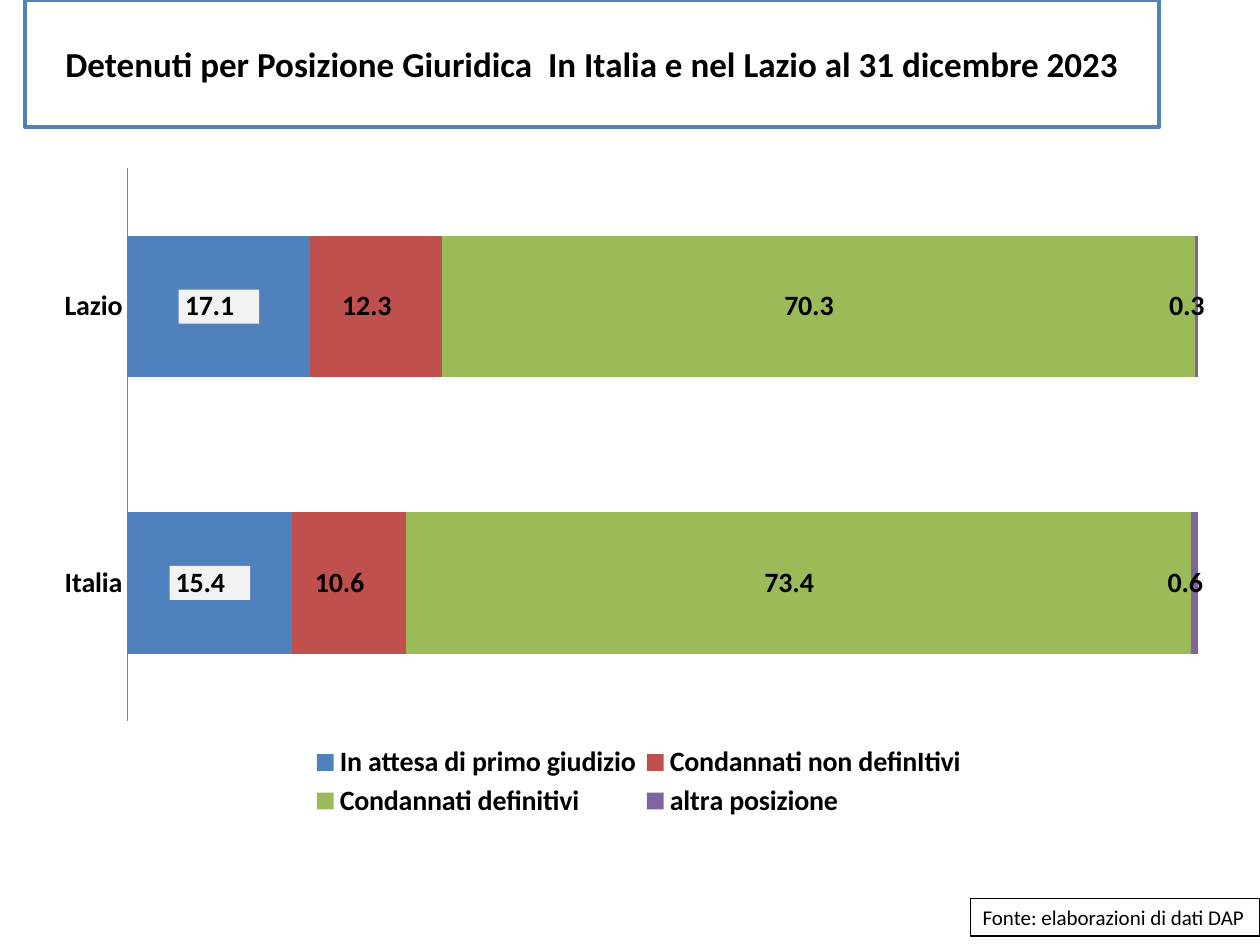
from lxml import etree
from pptx import Presentation
from pptx.chart.data import CategoryChartData
from pptx.dml.color import RGBColor
from pptx.enum.chart import XL_CHART_TYPE, XL_LEGEND_POSITION, XL_TICK_LABEL_POSITION, XL_TICK_MARK
from pptx.enum.text import MSO_ANCHOR, MSO_AUTO_SIZE, PP_ALIGN
from pptx.oxml import parse_xml
from pptx.oxml.ns import nsdecls, qn
from pptx.util import Inches, Pt

BAR = XL_CHART_TYPE.BAR_STACKED_100
BOTTOM = XL_LEGEND_POSITION.BOTTOM
NO_LABELS = XL_TICK_LABEL_POSITION.NONE
NO_TICK = XL_TICK_MARK.NONE
MIDDLE = MSO_ANCHOR.MIDDLE
GROW = MSO_AUTO_SIZE.SHAPE_TO_FIT_TEXT
CENTER = PP_ALIGN.CENTER

NUMBER = '_-* #,##0.0\\ _€_-;\\-* #,##0.0\\ _€_-;_-* "-"??\\ _€_-;_-@_-'
SERIES = [
    ("In attesa di primo giudizio", (17.1, 15.4), "4F81BD"),
    ("Condannati non definItivi", (12.3, 10.6), "C0504D"),
    ("Condannati definitivi", (70.3, 73.4), "9BBB59"),
    ("altra posizione", (0.3, 0.6), "8064A2"),
]


def style(font, size, bold):
    values = {"name": "Calibri", "size": Pt(size), "bold": bold}
    for key, value in values.items():
        setattr(font, key, value)
    font.color.rgb = RGBColor.from_string("000000")


def place(parent, index, area):
    """Fix a chart part at x, y, w, h, as fractions of the chart."""
    for old in parent.findall(qn("c:layout")):
        parent.remove(old)
    layout = etree.Element(qn("c:layout"))
    manual = etree.SubElement(layout, qn("c:manualLayout"))
    if parent.tag == qn("c:plotArea"):
        etree.SubElement(manual, qn("c:layoutTarget")).set("val", "inner")
    for key in ("xMode", "yMode"):
        etree.SubElement(manual, qn("c:" + key)).set("val", "edge")
    for key, value in zip("xywh", area):
        etree.SubElement(manual, qn("c:" + key)).set("val", str(value))
    parent.insert(index, layout)


deck = Presentation()
deck.slide_width, deck.slide_height = Inches(10), Inches(7.5)
slide = deck.slides.add_slide(deck.slide_layouts[5])

# Title and source note
title = slide.shapes.title
title.left, title.top = Inches(0.2), Inches(0)
title.width, title.height = Inches(9), Inches(1.01)
note = slide.shapes.add_textbox(Inches(7.7), Inches(7.13), Inches(2.3), Inches(0.3))
boxes = [
    (title, "Detenuti per Posizione Giuridica  In Italia e nel Lazio al 31 dicembre 2023",
     20, True, "4F81BD", 2),
    (note, "Fonte: elaborazioni di dati DAP", 12, False, "000000", 0.75),
]
for box, text, size, bold, line, width in boxes:
    box.fill.solid()
    box.fill.fore_color.rgb = RGBColor.from_string("FFFFFF")
    box.line.color.rgb = RGBColor.from_string(line)
    box.line.width = Pt(width)
    box.text_frame.text = text
    style(box.text_frame.paragraphs[0].runs[0].font, size, bold)
title.text_frame.vertical_anchor = MIDDLE
title.text_frame.paragraphs[0].alignment = CENTER
note.text_frame.word_wrap = False
note.text_frame.auto_size = GROW

# Stacked bars
data = CategoryChartData(number_format="0.0")
data.categories = ["Lazio", "Italia"]
for name, values, color in SERIES:
    data.add_series(name, values)
chart = slide.shapes.add_chart(
    BAR, Inches(0.35), Inches(1.23), Inches(9.44), Inches(5.35), data).chart
style(chart.font, 16, True)
chart.has_title = False
chart.has_legend = True
chart.legend.position = BOTTOM
chart.legend.include_in_layout = False

rows = chart.category_axis
rows.reverse_order = True
rows.major_tick_mark = NO_TICK
rows.format.line.color.rgb = RGBColor.from_string("868686")
scale = chart.value_axis
scale.has_major_gridlines = False
scale.tick_label_position = NO_LABELS
scale.visible = False

plot = chart.plots[0]
plot.gap_width, plot.overlap = 95, 100
plot.vary_by_categories = False
for series, (name, values, color) in zip(plot.series, SERIES):
    series.format.fill.solid()
    series.format.fill.fore_color.rgb = RGBColor.from_string(color)
    labels = series.data_labels
    labels.show_value = True
    labels.number_format = NUMBER
    labels.number_format_is_linked = False
    style(labels.font, 16, True)

# Pale backing behind the labels of the first series
backing = parse_xml(
    f'<c:spPr {nsdecls("c", "a")}><a:solidFill><a:srgbClr val="F2F2F2"/></a:solidFill></c:spPr>')
plot.series[0].data_labels._element.find(qn("c:numFmt")).addnext(backing)

root = chart._chartSpace.chart
place(root.plotArea, 0, (0.07, 0.02, 0.9, 0.82))
place(root.find(qn("c:legend")), 1, (0.22, 0.87, 0.56, 0.12))

deck.save("out.pptx")
